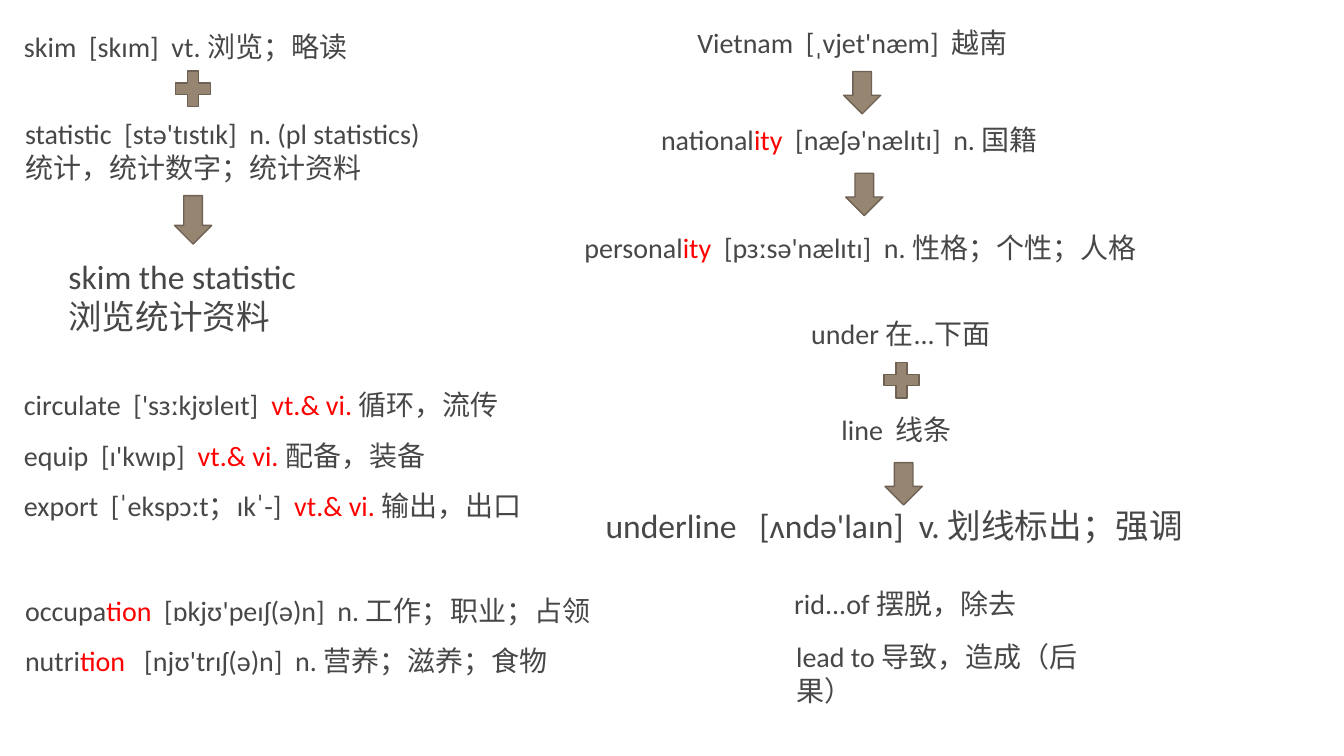
"""Build a vocabulary slide of word families, linked by plus signs and arrows."""
import pptx
import pptx.util
import pptx.dml.color
import pptx.enum.shapes
import pptx.enum.text

Pt = pptx.util.Pt
KIND = pptx.enum.shapes.MSO_SHAPE
COLORS = {"text": "474747", "mark": "FF0000", "fill": "968571", "edge": "6F6254"}

# Text between asterisks is set in the mark colour.
NOTES = [
    ((10, 17.3, 263, 31), ["skim  [skɪm]  vt. 浏览；略读"], {}),
    ((10.8, 80, 327.6, 55.4),
     ["statistic  [stə'tɪstɪk]  n. (pl statistics)", "统计，统计数字；统计资料"], {}),
    ((41.8, 179.3, 201.6, 64.8), ["skim the statistic", "浏览统计资料"], {"size": 24}),
    ((10, 261.4, 408.2, 115.2),
     ["circulate  ['sɜːkjʊleɪt]  *vt.& vi. *循环，流传",
      "equip  [ɪ'kwɪp]  *vt.& vi. *配备，装备",
      "export  [ˈekspɔːt；ɪkˈ-]  *vt.& vi. *输出，出口"], {"space": 1.5}),
    ((10.8, 408.2, 450.7, 79.2),
     ["occupa*tion*  [ɒkjʊ'peɪʃ(ə)n]  n. 工作；职业；占领",
      "nutri*tion *  [njʊ'trɪʃ(ə)n]  n. 营养；滋养；食物"], {"space": 1.5}),
    ((491, 14.4, 263.5, 31), ["Vietnam  [ˌvjet'næm]  越南"], {}),
    ((465.1, 84.2, 311.8, 31), ["national*ity*  [næʃə'nælɪtɪ]  n. 国籍"], {}),
    ((410.4, 161.3, 441.4, 31), ["personal*ity * [pɜːsə'nælɪtɪ]  n. 性格；个性；人格"], {}),
    ((572.4, 222.5, 165.6, 31), ["under 在...下面"], {}),
    ((594, 290.9, 113, 31), ["line  线条"], {}),
    ((425.5, 357.1, 487.4, 36), ["underline   [ʌndə'laɪn]  v. 划线标出；强调"], {"size": 24}),
    ((560.2, 415.4, 225.4, 31), ["rid...of 摆脱，除去"], {}),
    ((561.6, 453.6, 239.8, 31), ["lead to 导致，造成（后果）"], {}),
]
SIGNS = {
    KIND.MATH_PLUS: [(121, 46.1, 33.8, 34.6), (627.1, 254.2, 33.8, 34.6)],
    KIND.DOWN_ARROW: [(124.6, 139.7, 26.6, 34.6), (602.6, 51.1, 26.6, 30.2),
                      (604.1, 123.8, 26.6, 30.2), (632.2, 330.5, 26.6, 30.2)],
}


def tint(name):
    return pptx.dml.color.RGBColor.from_string(COLORS[name])


def write(slide, box, lines, size=20, space=None, font="Calibri"):
    frame = slide.shapes.add_textbox(*map(Pt, box)).text_frame
    frame.word_wrap = True
    frame.auto_size = pptx.enum.text.MSO_AUTO_SIZE.SHAPE_TO_FIT_TEXT
    for row, line in enumerate(lines):
        para = frame.add_paragraph() if row else frame.paragraphs[0]
        if space:
            para.line_spacing = space
        for turn, part in enumerate(line.split("*")):
            if part:
                run = para.add_run()
                run.text = part
                run.font.name = font
                run.font.size = Pt(size)
                run.font.color.rgb = tint("mark" if turn % 2 else "text")


def draw(slide, kind, box):
    sign = slide.shapes.add_shape(kind, *map(Pt, box))
    sign.shadow.inherit = False
    sign.fill.solid()
    sign.fill.fore_color.rgb = tint("fill")
    sign.line.color.rgb = tint("edge")
    sign.line.width = Pt(1)


def main():
    deck = pptx.Presentation()
    deck.slide_width, deck.slide_height = Pt(960), Pt(540)
    slide = deck.slides.add_slide(deck.slide_layouts[6])
    for box, lines, style in NOTES:
        write(slide, box, lines, **style)
    for kind, boxes in SIGNS.items():
        for box in boxes:
            draw(slide, kind, box)
    deck.save("out.pptx")


if __name__ == "__main__":
    main()
